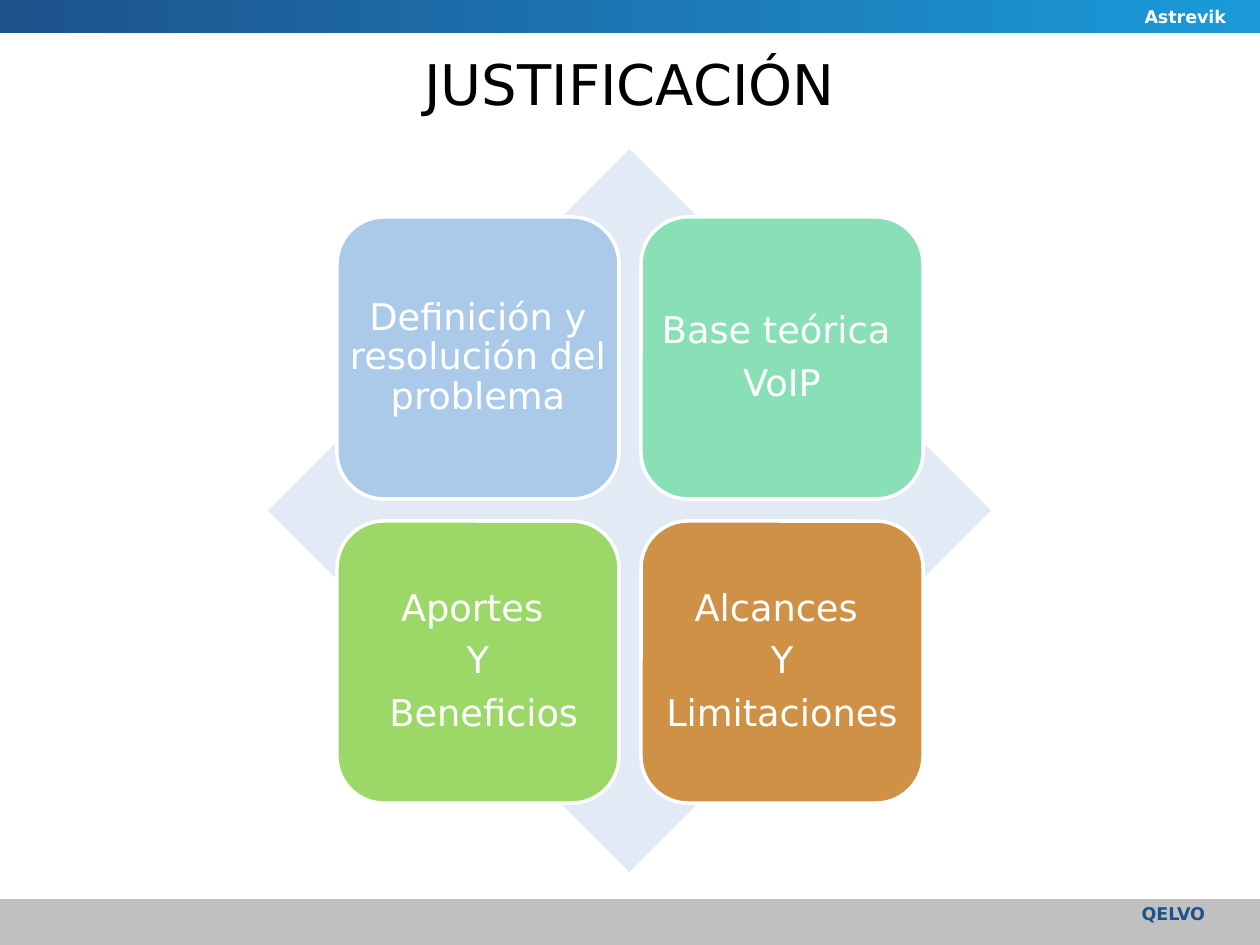
from dataclasses import dataclass

from pptx import Presentation
from pptx import util as u
from pptx.dml.color import RGBColor
from pptx.enum import shapes, text

PX_PER_INCH = 126
FONT = "DejaVu Sans"
WHITE = "FFFFFF"
NAVY = "1D528D"
CARD_LEFT, CARD_TOP, CARD_SIZE, CARD_STEP = 337, 217, 282, 304


@dataclass
class Box:
    left: int
    top: int
    width: int
    height: int

    def emu(self) -> list[int]:
        return [px(n) for n in (self.left, self.top, self.width, self.height)]


@dataclass
class Card:
    column: int
    row: int
    fill: str
    lines: list[str]


@dataclass
class Label:
    box: Box
    lines: list[str]
    size: int
    color: str
    align: text.PP_ALIGN = text.PP_ALIGN.CENTER
    anchor: text.MSO_ANCHOR = text.MSO_ANCHOR.MIDDLE
    bold: bool = False
    margin: int = 11
    line_spacing: float = 1.0
    space_after: float = 0


def px(length: int) -> int:
    return u.Inches(length / PX_PER_INCH)


def rgb(color: str) -> RGBColor:
    return RGBColor.from_string(color)


def add_block(slide, kind: shapes.MSO_SHAPE, box: Box, fill: str):
    shape = slide.shapes.add_shape(kind, *box.emu())
    shape.shadow.inherit = False
    shape.fill.solid()
    shape.fill.fore_color.rgb = rgb(fill)
    shape.line.fill.background()
    return shape


def add_label(slide, label: Label) -> None:
    frame = slide.shapes.add_textbox(*label.box.emu()).text_frame
    frame.word_wrap = True
    frame.vertical_anchor = label.anchor
    frame.margin_left = frame.margin_right = px(label.margin)
    frame.margin_top = frame.margin_bottom = px(min(label.margin, 6))
    for index, line in enumerate(label.lines):
        paragraph = frame.add_paragraph() if index else frame.paragraphs[0]
        paragraph.text = line
        paragraph.alignment = label.align
        paragraph.line_spacing = label.line_spacing
        paragraph.space_after = u.Pt(label.space_after)
        paragraph.font.name = FONT
        paragraph.font.size = u.Pt(label.size)
        paragraph.font.bold = label.bold
        paragraph.font.color.rgb = rgb(label.color)


def add_card(slide, card: Card) -> None:
    box = Box(CARD_LEFT + card.column * CARD_STEP, CARD_TOP + card.row * CARD_STEP,
              CARD_SIZE, CARD_SIZE)
    shape = add_block(slide, shapes.MSO_SHAPE.ROUNDED_RECTANGLE, box, card.fill)
    shape.line.color.rgb = rgb(WHITE)
    shape.line.width = u.Pt(2)
    add_label(slide, Label(box, card.lines, 21, WHITE,
                           line_spacing=0.9, space_after=7.35))


def add_corner_label(slide, box: Box, line: str, color: str) -> None:
    add_label(slide, Label(box, [line], 10, color, text.PP_ALIGN.RIGHT,
                           text.MSO_ANCHOR.TOP, bold=True, margin=13))


def add_bars(slide) -> None:
    add_block(slide, shapes.MSO_SHAPE.RECTANGLE, Box(0, 899, 1260, 46), "C0C0C0")
    header = add_block(slide, shapes.MSO_SHAPE.RECTANGLE, Box(0, 0, 1260, 33), NAVY)
    header.fill.gradient()
    header.fill.gradient_angle = 0
    for stop, color in zip(header.fill.gradient_stops, (NAVY, "1B9AD9")):
        stop.color.rgb = rgb(color)


CARDS = [
    Card(0, 0, "ABCAE9", ["Definición y resolución del problema"]),
    Card(1, 0, "89E0B6", ["Base teórica ", "VoIP"]),
    Card(0, 1, "9CD868", ["Aportes ", "Y", " Beneficios"]),
    Card(1, 1, "CF9146", ["Alcances ", "Y", "Limitaciones"]),
]


def main() -> None:
    presentation = Presentation()
    presentation.slide_width = px(1260)
    presentation.slide_height = px(945)
    slide = presentation.slides.add_slide(presentation.slide_layouts[6])
    add_bars(slide)
    add_label(slide, Label(Box(63, 44, 1134, 78), ["JUSTIFICACIÓN"], 32, "000000"))
    add_block(slide, shapes.MSO_SHAPE.DIAMOND, Box(268, 149, 723, 723), "E2EAF6")
    for card in CARDS:
        add_card(slide, card)
    add_corner_label(slide, Box(945, 0, 294, 32), "Astrevik", WHITE)
    add_corner_label(slide, Box(819, 897, 399, 40), "QELVO", NAVY)
    presentation.save("out.pptx")


if __name__ == "__main__":
    main()
